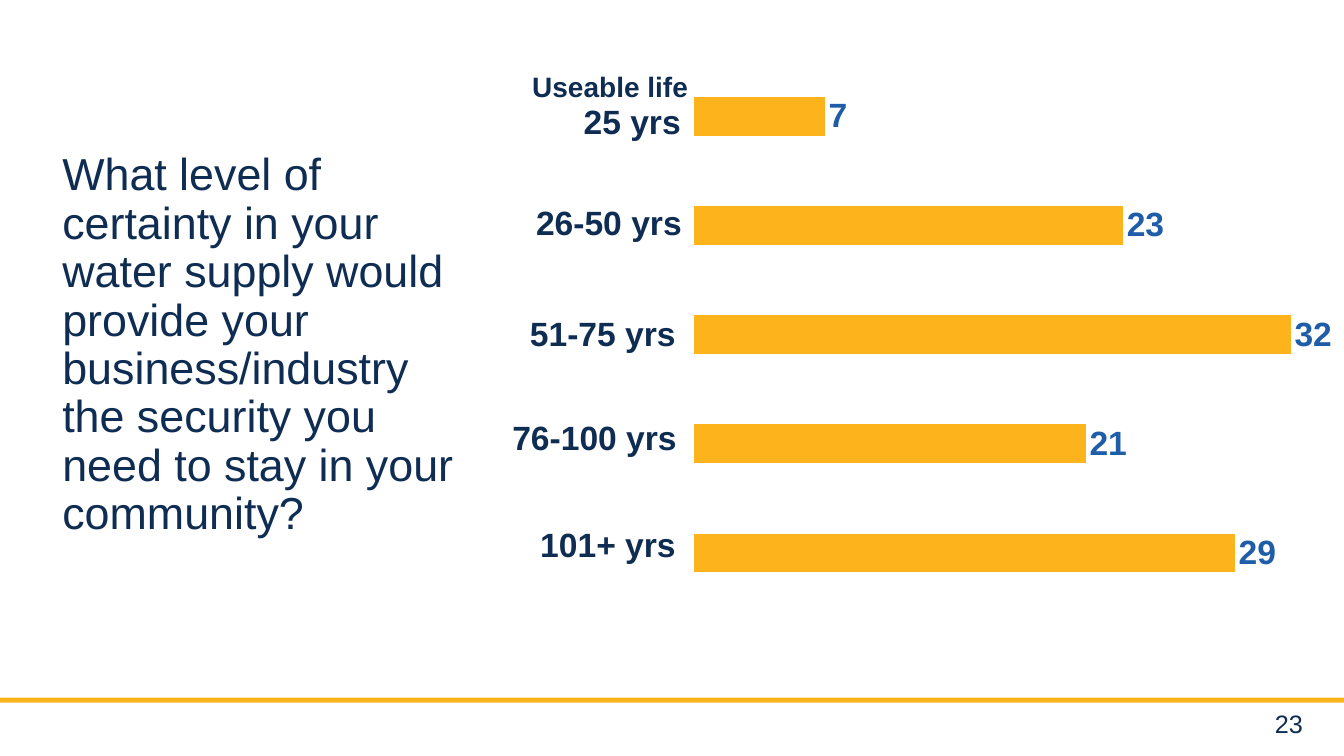
from dataclasses import dataclass

from pptx import Presentation
from pptx.chart.data import CategoryChartData
from pptx.dml.color import RGBColor
from pptx.enum.chart import XL_CHART_TYPE, XL_LABEL_POSITION
from pptx.enum.shapes import MSO_SHAPE
from pptx.enum.text import MSO_ANCHOR, PP_ALIGN
from pptx.slide import Slide
from pptx.util import Inches, Pt

BAR = XL_CHART_TYPE.BAR_CLUSTERED
RECT = MSO_SHAPE.RECTANGLE
OUT_END = XL_LABEL_POSITION.OUTSIDE_END
LEFT, RIGHT = PP_ALIGN.LEFT, PP_ALIGN.RIGHT
TOP, MIDDLE = MSO_ANCHOR.TOP, MSO_ANCHOR.MIDDLE


@dataclass(frozen=True)
class Theme:
    font: str = "Arial"
    navy: RGBColor = RGBColor(0x0F, 0x2D, 0x52)
    blue: RGBColor = RGBColor(0x1F, 0x5D, 0xA9)
    gold: RGBColor = RGBColor(0xFC, 0xB3, 0x1C)
    title: int = 32
    label: int = 24
    head: int = 20
    page: int = 18
    base: int = 10


@dataclass(frozen=True)
class Box:
    left: float
    top: float
    width: float
    height: float

    def place(self) -> tuple[int, int, int, int]:
        return (Inches(self.left), Inches(self.top),
                Inches(self.width), Inches(self.height))


@dataclass(frozen=True)
class Span:
    text: str
    count: int
    box: Box


THEME = Theme()
TITLE = ("What level of certainty in your water supply would provide your "
         "business/industry the security you need to stay in your community?")
SPANS = (
    Span("25 yrs", 7, Box(5.43, 0.95, 1.42, 0.5)),
    Span("26-50 yrs", 23, Box(5.12, 1.95, 1.74, 0.5)),
    Span("51-75 yrs", 32, Box(5.06, 3.06, 1.74, 0.5)),
    Span("76-100 yrs", 21, Box(4.83, 4.09, 1.98, 0.5)),
    Span("101+ yrs", 29, Box(4.82, 5.15, 1.98, 0.5)),
)


def add_text(slide: Slide, text: str, box: Box, *, size: int,
             bold: bool = False, align: PP_ALIGN = LEFT,
             anchor: MSO_ANCHOR = TOP, lines: float = 1.0) -> None:
    frame = slide.shapes.add_textbox(*box.place()).text_frame
    frame.word_wrap = True
    frame.vertical_anchor = anchor
    para = frame.paragraphs[0]
    para.text = text
    para.alignment = align
    para.line_spacing = lines
    font = para.runs[0].font
    font.name = THEME.font
    font.size = Pt(size)
    font.bold = bold
    font.color.rgb = THEME.navy


def add_rule(slide: Slide, box: Box) -> None:
    rule = slide.shapes.add_shape(RECT, *box.place())
    rule.shadow.inherit = False
    rule.fill.solid()
    rule.fill.fore_color.rgb = THEME.gold
    rule.line.fill.background()


def add_bars(slide: Slide, spans: tuple[Span, ...], box: Box) -> None:
    data = CategoryChartData()
    data.categories = [str(rank) for rank in range(1, len(spans) + 1)]
    data.add_series("Series 1", [span.count for span in spans])
    chart = slide.shapes.add_chart(BAR, *box.place(), data).chart
    chart.has_legend = False
    chart.has_title = False
    chart.font.name = THEME.font
    chart.font.size = Pt(THEME.base)
    chart.font.color.rgb = THEME.navy

    chart.category_axis.reverse_order = True
    chart.category_axis.visible = False
    chart.value_axis.has_major_gridlines = False
    chart.value_axis.minimum_scale = 0
    chart.value_axis.maximum_scale = 35
    chart.value_axis.visible = False

    plot = chart.plots[0]
    plot.gap_width = 182
    plot.vary_by_categories = False
    bars = plot.series[0]
    bars.format.fill.solid()
    bars.format.fill.fore_color.rgb = THEME.gold
    labels = bars.data_labels
    labels.show_value = True
    labels.position = OUT_END
    labels.font.name = THEME.font
    labels.font.size = Pt(THEME.label)
    labels.font.bold = True
    labels.font.color.rgb = THEME.blue


def main() -> None:
    deck = Presentation()
    deck.slide_width = Inches(13.33)
    deck.slide_height = Inches(7.5)
    slide = deck.slides.add_slide(deck.slide_layouts[6])

    add_rule(slide, Box(-0.18, 6.92, 13.65, 0.05))
    add_text(slide, "23", Box(12.08, 7, 0.94, 0.35), size=THEME.page,
             align=RIGHT, anchor=MIDDLE)
    add_text(slide, "Useable life", Box(5.18, 0.68, 4.3, 0.67),
             size=THEME.head, bold=True, lines=0.9)
    add_bars(slide, SPANS, Box(6.75, 0.5, 6.74, 5.64))
    for span in SPANS:
        add_text(slide, span.text, span.box, size=THEME.label,
                 bold=True, align=RIGHT)
    add_text(slide, TITLE, Box(0.52, 1.46, 4.3, 4.17),
             size=THEME.title, lines=0.9)
    deck.save("out.pptx")


if __name__ == "__main__":
    main()
